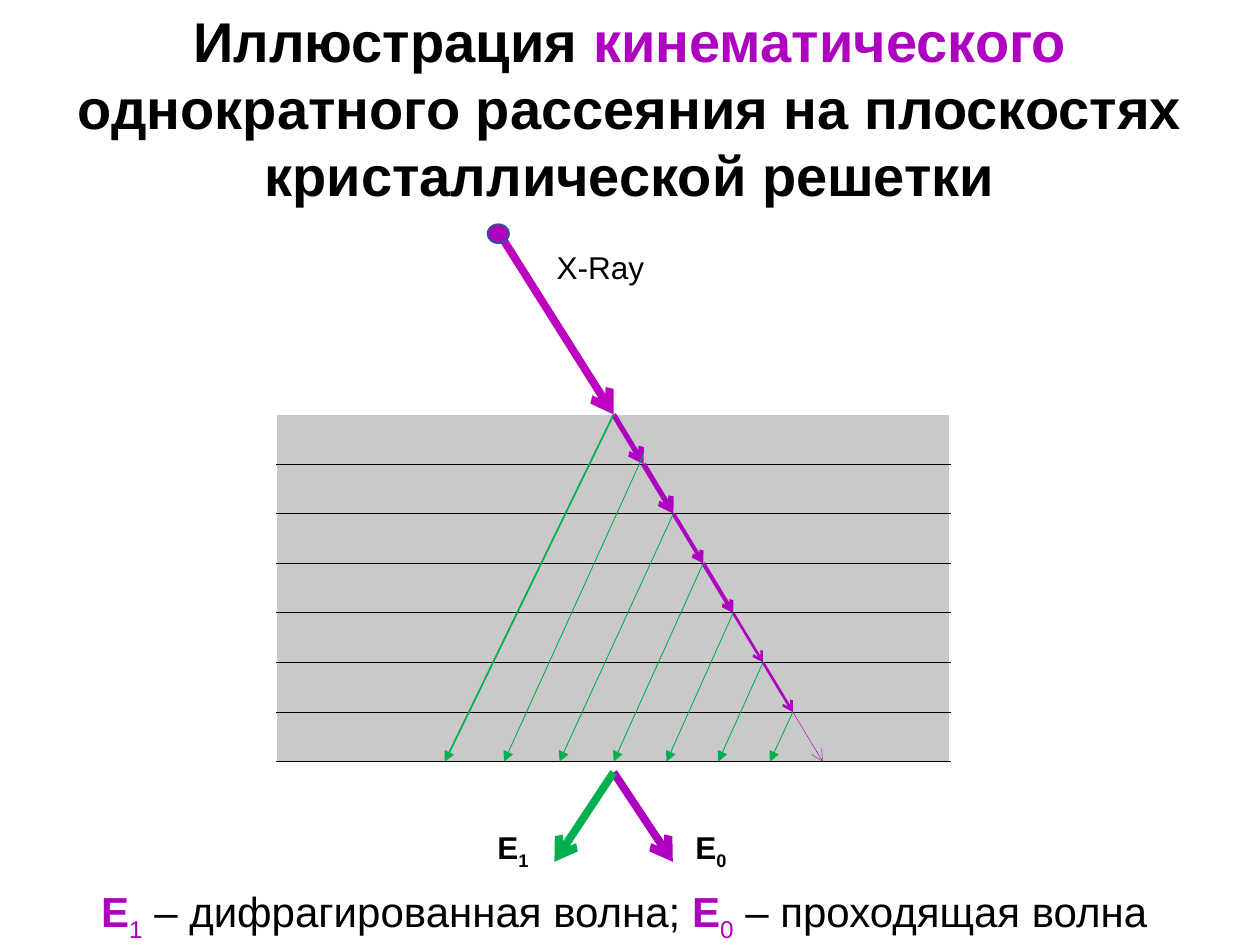
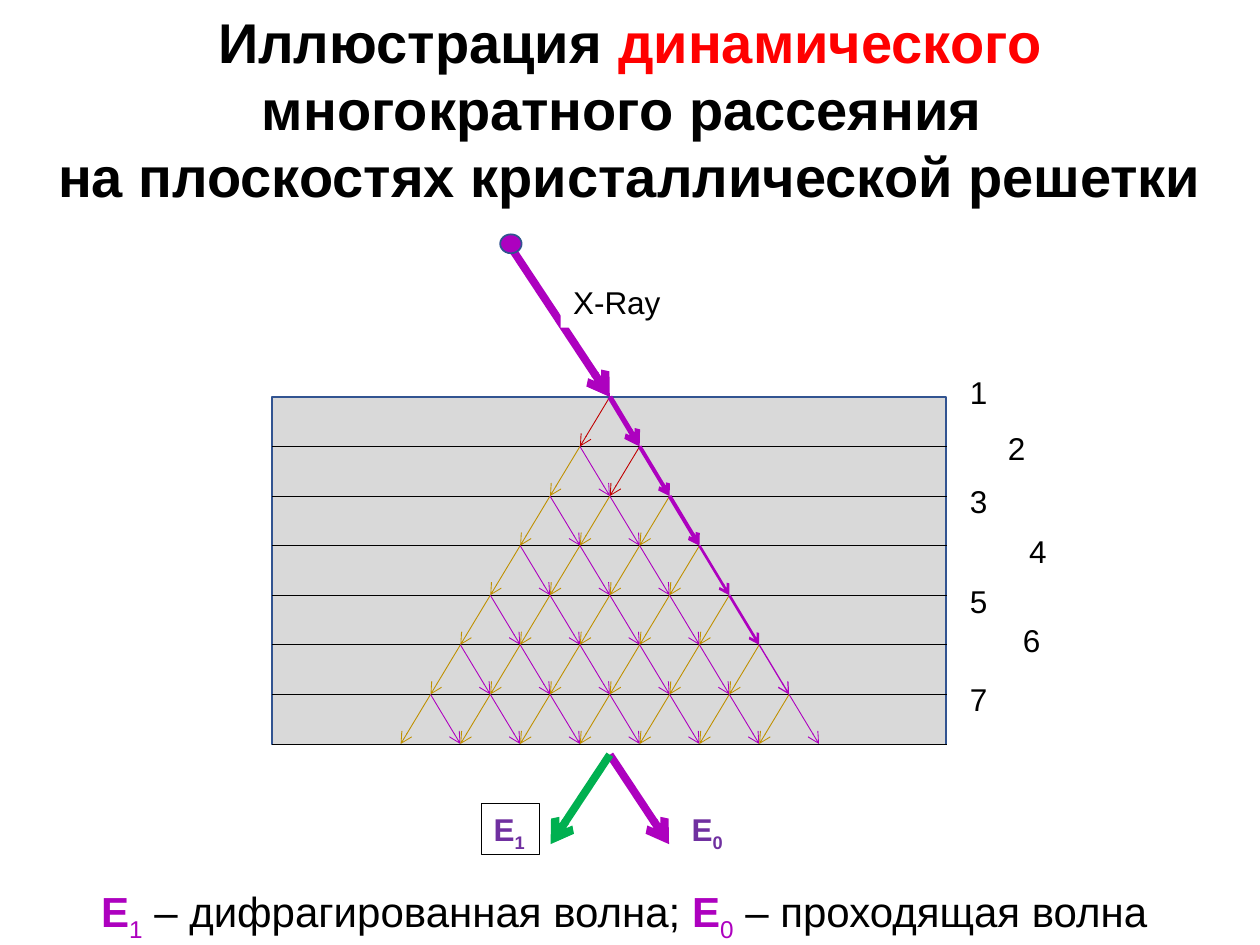
import pptx
import pptx.util
import pptx.dml.color
import pptx.enum.shapes
import pptx.enum.text
import pptx.oxml.xmlchemy

Inches = pptx.util.Inches
Pt = pptx.util.Pt
SHAPE = pptx.enum.shapes.MSO_SHAPE
ALIGN = pptx.enum.text.PP_ALIGN
element = pptx.oxml.xmlchemy.OxmlElement

HUES = {
    "black": "000000", "white": "FFFFFF", "violet": "AD01BF", "beam": "BC04C0",
    "green": "00B050", "red": "FF0000", "crimson": "C00000", "gold": "BF9000",
    "purple": "7030A0", "navy": "325491", "gray": "C9C9C9", "pale": "D9D9D9",
}
STEP_X = 1.66 / 7
STEP_Y = 2.755 / 7
LAYERS = 7
HALF = 2.68


def assign(target, values):
    for name, value in values.items():
        setattr(target, name, value)


def hue(name):
    return pptx.dml.color.RGBColor.from_string(HUES[name])


class Deck:
    """Holds the shared style and the slide being drawn."""

    def __init__(self):
        self.show = pptx.Presentation()
        assign(self.show, {"slide_width": Inches(10), "slide_height": Inches(7.5)})
        self.page = None

    def start(self):
        self.page = self.show.slides.add_slide(self.show.slide_layouts[6])

    def shape(self, kind, box, fill, edge=None, width=1):
        item = self.page.shapes.add_shape(kind, *map(Inches, box))
        item.shadow.inherit = False
        item.fill.solid()
        item.fill.fore_color.rgb = hue(fill)
        if edge:
            item.line.color.rgb = hue(edge)
            item.line.width = Pt(width)
        else:
            item.line.fill.background()
        return item

    def line(self, start, end, color, width, head=None):
        kind = pptx.enum.shapes.MSO_CONNECTOR.STRAIGHT
        item = self.page.shapes.add_connector(kind, *map(Inches, (*start, *end)))
        item.line.color.rgb = hue(color)
        item.line.width = Pt(width)
        if head:
            tail = element("a:tailEnd")
            tail.set("type", head)
            item.line._get_or_add_ln().append(tail)
        item._element.spPr.append(element("a:effectLst"))

    def text(self, box, rows, size, align=ALIGN.LEFT, wrap=False, edge=None):
        """Each row is a list of runs: text, colour, bold, subscript."""
        frame = self.shape(SHAPE.RECTANGLE, box, "white", edge, 0.75).text_frame
        assign(frame, {
            "word_wrap": wrap,
            "auto_size": pptx.enum.text.MSO_AUTO_SIZE.SHAPE_TO_FIT_TEXT,
            "vertical_anchor": pptx.enum.text.MSO_ANCHOR.TOP,
        })
        for index, row in enumerate(rows):
            para = frame.add_paragraph() if index else frame.paragraphs[0]
            para.alignment = align
            for words, color, bold, sub in row:
                run = para.add_run()
                run.text = words
                assign(run.font, {"name": "Arial", "size": Pt(size), "bold": bold})
                run.font.color.rgb = hue(color)
                if sub:
                    run._r.get_or_add_rPr().set("baseline", "-25000")

    def label(self, left, top, words, width):
        self.text((left, top, width, 0.4), [[(words, "black", False, False)]], 18)

    def title(self, top, rows):
        runs = [[(words, color, True, False) for words, color in row] for row in rows]
        self.text((0, top, 10, 1.72), runs, 32, ALIGN.CENTER, True)

    def legend(self):
        row = []
        for digit, words in (("1", " – дифрагированная волна; "),
                             ("0", " – проходящая волна ")):
            row += [("E", "violet", True, False), (digit, "violet", False, True),
                    (words, "black", False, False)]
        self.text((0, 6.98, 10, 0.5), [row], 24, ALIGN.CENTER, True)

    def crystal(self, left, top, fill, edge):
        self.shape(SHAPE.RECTANGLE, (left, top, 5.35, 2.76), fill, edge)
        for layer in range(1, LAYERS + 1):
            level = top + layer * STEP_Y
            self.line((left, level), (left + 5.36, level), "black", 0.5)

    def source(self, dot, start, end, color, label):
        """Incoming beam with its name and the dot it starts from."""
        self.line(start, end, color, 4.5, "arrow")
        self.label(*label, "X-Ray", 0.9)
        self.shape(SHAPE.OVAL, (*dot, 0.17, 0.15), "violet", "navy")

    def exits(self, mid, top, color, frame=None):
        """Transmitted and diffracted waves below the crystal."""
        for side, wave, digit, shift, edge in ((1, "violet", "0", 0.55, None),
                                               (-1, "green", "1", -1.02, frame)):
            self.line((mid, top + 2.84), (mid + side * 0.47, top + 3.55),
                      wave, 4.5, "arrow")
            row = [("E", color, True, False), (digit, color, True, True)]
            self.text((mid + shift, top + 3.23, 0.46, 0.4), [row], 18, edge=edge)


def single(deck):
    left, top = 2.19, 3.29
    mid = left + HALF
    deck.start()
    deck.crystal(left, top, "gray", "white")
    nodes = [(mid + n * STEP_X, top + n * STEP_Y) for n in range(LAYERS + 1)]
    widths = (3, 3, 2.25, 2.25, 1.5, 1.5, 0.25)
    for start, end, width in zip(nodes, nodes[1:], widths):
        deck.line(start, end, "violet", width, "arrow")
    deck.source((3.87, 1.78), (3.93, 1.8), nodes[0], "beam", (4.32, 1.92))
    deck.exits(mid, top, "black")
    feet = (3.53, 4, 4.44, 4.87, 5.29, 5.7, 6.11)
    for index, (node, foot) in enumerate(zip(nodes, feet)):
        start = (node[0], 3.61) if index == 1 else node
        deck.line(start, (foot, nodes[-1][1]), "green", 0.5 if index else 1, "triangle")
    deck.title(0, [[("Иллюстрация ", "black"), ("кинематического", "violet"),
                    (" однократного рассеяния на плоскостях кристаллической решетки",
                     "black")]])
    deck.legend()


def multiple(deck):
    left, top = 2.16, 3.15
    mid = left + HALF
    deck.start()
    deck.crystal(left, top, "pale", "navy")
    edges = (3, 2.25, 2.25, 1.5, 1.5, 0.75, 0.5)
    for row, edge in enumerate(edges):
        level = top + row * STEP_Y
        for col in range(row + 1):
            spot = mid + (2 * col - row) * STEP_X
            first = (row, col) in ((0, 0), (1, 1))
            deck.line((spot, level), (spot - STEP_X, level + STEP_Y),
                      "crimson" if first else "gold", 0.5, "arrow")
            deck.line((spot, level), (spot + STEP_X, level + STEP_Y),
                      "violet", edge if col == row else 0.5, "arrow")
    places = ((7.6, 2.91), (7.9, 3.36), (7.6, 3.78), (8.07, 4.17),
              (7.6, 4.57), (8.02, 4.88), (7.6, 5.35))
    for number, place in enumerate(places, 1):
        deck.label(*place, str(number), 0.34)
    deck.source((3.97, 1.86), (4.04, 1.94), (mid, top), "violet", (4.45, 2.2))
    deck.exits(mid, top, "purple", "black")
    deck.title(0.01, [[("Иллюстрация ", "black"), ("динамического", "red")],
                      [("многократного рассеяния ", "black")],
                      [("на плоскостях кристаллической решетки", "black")]])
    deck.legend()


def main():
    deck = Deck()
    single(deck)
    multiple(deck)
    deck.show.save("out.pptx")


if __name__ == "__main__":
    main()
